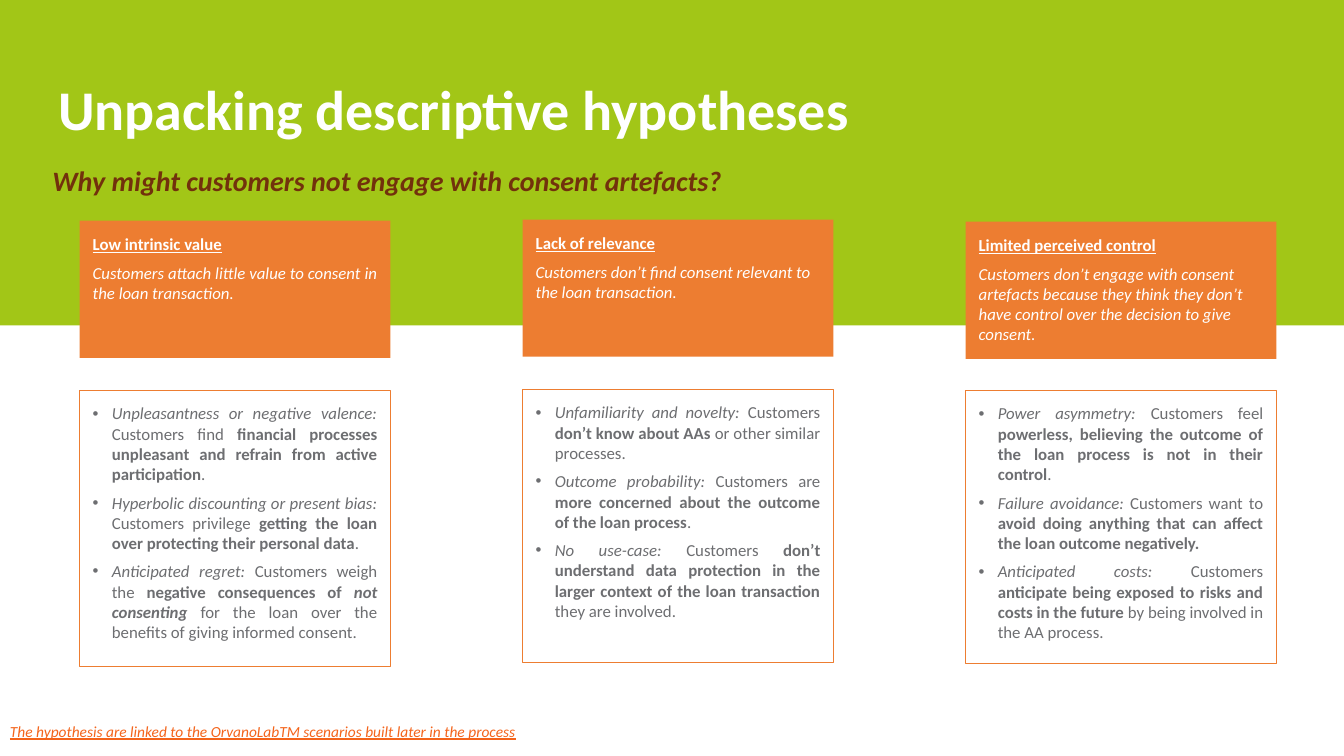
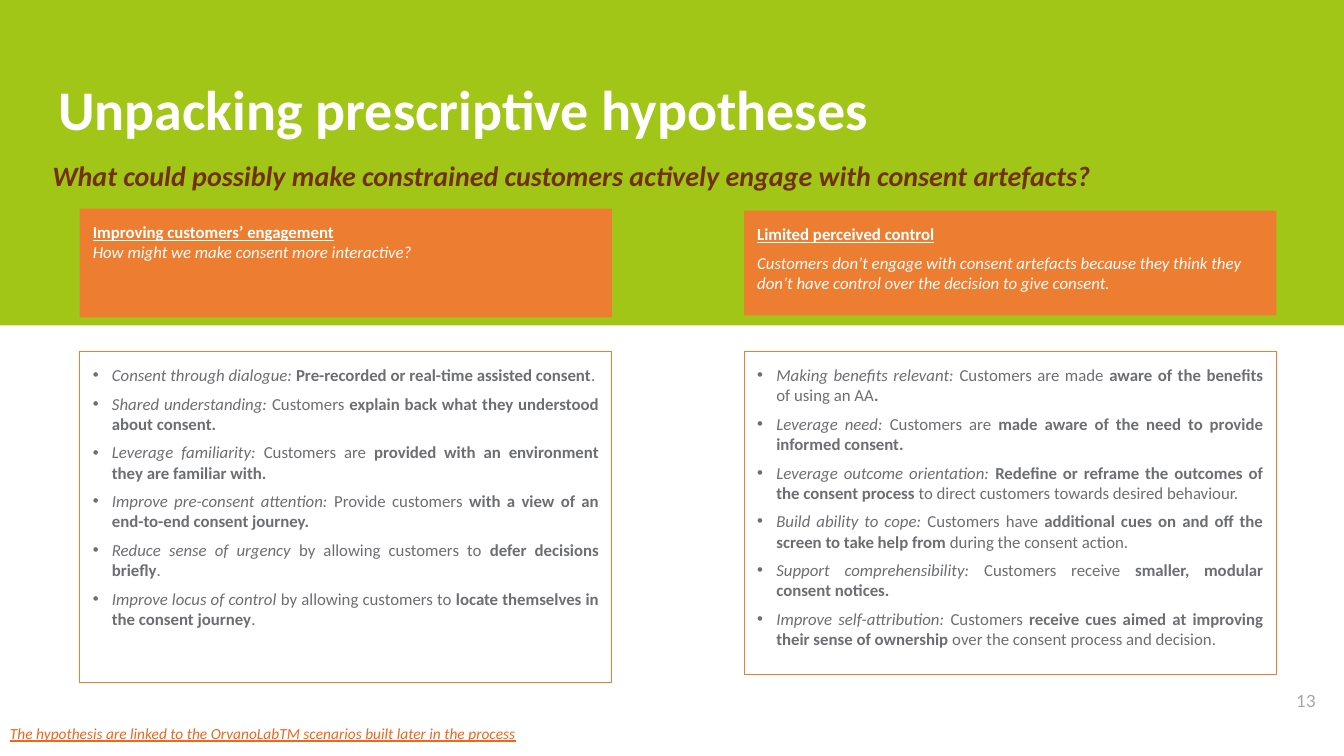
"""Build two slides that unpack hypotheses as columns of cards."""
from dataclasses import dataclass

import lxml.etree
import pptx
import pptx.dml.color
import pptx.enum.shapes
import pptx.enum.text
import pptx.oxml.ns
import pptx.util

Inches = pptx.util.Inches
Pt = pptx.util.Pt
ALIGN = pptx.enum.text.PP_ALIGN
ANCHOR = pptx.enum.text.MSO_ANCHOR

LIME, ORANGE, WHITE = "A2C617", "ED7D31", "FFFFFF"
GREY, BROWN, RUST, PALE = "6D6E71", "72310C", "F4641B", "A5A5A5"
WIDE, TALL = 13.33, 7.5
LEFT, RIGHT, GAP = 0.79, 12.66, 1.31
FOOTER = "The hypothesis are linked to the OrvanoLabTM scenarios built later in the process"


@dataclass(frozen=True)
class Box:
    left: float
    top: float
    width: float
    height: float


@dataclass(frozen=True)
class Style:
    size: float
    color: str
    bold: bool = False
    slant: bool = False
    under: bool = False
    font: str = "Calibri"


@dataclass(frozen=True)
class Card:
    head: str
    note: str
    points: tuple[str, ...]
    top: float
    height: float
    list_top: float
    list_height: float
    align: tuple = (ALIGN.LEFT, ALIGN.LEFT)
    after: float = 6


@dataclass(frozen=True)
class Page:
    title: str
    query: str
    query_box: Box
    cards: tuple[Card, ...]
    foot_top: float
    spacing: float = 1.0
    number: str = ""


TITLE = Style(40, WHITE, bold=True)
QUERY = Style(20, BROWN, bold=True, slant=True)
HEAD = Style(12, WHITE, bold=True, under=True)
NOTE = Style(12, WHITE, slant=True)
BODY = Style(12, GREY)
FOOT = Style(11, RUST, slant=True, under=True)
NUMBER = Style(12, PALE, font="Lato")

CONTROL = "Limited perceived control"
CONTROL_NOTE = (
    "Customers don’t engage with consent artefacts because they think they "
    "don’t have control over the decision to give consent."
)

PAGES = (
    Page(
        "Unpacking descriptive hypotheses",
        "Why might customers not engage with consent artefacts?",
        Box(0.42, 1.52, 12.29, 0.54),
        (
            Card(
                "Low intrinsic value",
                "Customers attach little value to consent in the loan transaction.",
                (
                    "_Unpleasantness or negative valence: _Customers find *financial processes "
                    "unpleasant and refrain from active participation*.",
                    "_Hyperbolic discounting or present bias: _Customers privilege *getting the "
                    "loan over protecting their personal data*.",
                    "_Anticipated regret: _Customers weigh the *negative consequences of _not_ "
                    "_consenting _*for the loan over the benefits of giving informed consent.",
                ),
                2.19, 1.36, 3.87, 2.74, (ALIGN.LEFT, ALIGN.JUSTIFY),
            ),
            Card(
                "Lack of relevance",
                "Customers don’t find consent relevant to the loan transaction.",
                (
                    "_Unfamiliarity and novelty: _Customers* don’t know about AAs *or other "
                    "similar processes.",
                    "_Outcome probability: _Customers are* more concerned about the outcome of "
                    "the loan process*.",
                    "_No use-case: _Customers *don’t understand data protection in the larger "
                    "context of the loan transaction* they are involved.",
                ),
                2.18, 1.36, 3.86, 2.71,
            ),
            Card(
                CONTROL,
                CONTROL_NOTE,
                (
                    "_Power asymmetry: _Customers feel *powerless, believing the outcome of the "
                    "loan process is not in their control*.",
                    "_Failure avoidance: _Customers want to *avoid doing anything that can "
                    "affect the loan outcome negatively.*",
                    "_Anticipated costs: _Customers *anticipate being exposed to risks and costs "
                    "in the future* by being involved in the AA process.",
                ),
                2.2, 1.36, 3.87, 2.71,
            ),
        ),
        7.07,
    ),
    Page(
        "Unpacking prescriptive hypotheses",
        "What could possibly make constrained customers actively engage with consent artefacts?",
        Box(0.42, 1.54, 12.29, 0.47),
        (
            Card(
                "Improving customers’ engagement",
                "How might we make consent more interactive?",
                (
                    "_Consent through dialogue: _*Pre-recorded or real-time assisted consent*.",
                    "_Shared understanding: _Customers *explain back what they understood about "
                    "consent.*",
                    "_Leverage familiarity: _Customers are *provided with an environment they "
                    "are familiar with.*",
                    "_Improve pre-consent attention: _Provide customers *with a view of an "
                    "end-to-end consent journey.*",
                    "_Reduce sense of urgency _by allowing customers to *defer decisions "
                    "briefly*.",
                    "_Improve locus of control _by allowing customers to *locate themselves in "
                    "the consent journey*.",
                ),
                2.07, 1.08, 3.49, 3.28, (ALIGN.JUSTIFY, ALIGN.JUSTIFY), 0,
            ),
            Card(
                CONTROL,
                CONTROL_NOTE,
                (
                    "_Making benefits relevant: _Customers are made *aware of the benefits* of "
                    "using an AA*.*",
                    "_Leverage need: _Customers are *made aware of the need to provide informed "
                    "consent.*",
                    "_Leverage outcome orientation: _*Redefine or reframe the outcomes of the "
                    "consent process* to direct customers towards desired behaviour.",
                    "_Build ability to cope: _Customers have *additional cues on and off the "
                    "screen to take help from* during the consent action.",
                    "_Support comprehensibility: _Customers receive *smaller, modular consent "
                    "notices.*",
                    "_Improve self-attribution: _Customers *receive cues aimed at improving "
                    "their sense of ownership* over the consent process and decision.",
                ),
                2.09, 1.04, 3.49, 3.2,
            ),
        ),
        7.09,
        0.8,
        "13",
    ),
)


def paint(color: str) -> pptx.dml.color.RGBColor:
    return pptx.dml.color.RGBColor.from_string(color)


def place(box: Box) -> tuple:
    return tuple(map(Inches, (box.left, box.top, box.width, box.height)))


def add_rect(slide, box: Box, fill: str = "", line: str = ""):
    rect = slide.shapes.add_shape(pptx.enum.shapes.MSO_SHAPE.RECTANGLE, *place(box))
    rect.shadow.inherit = False
    if fill:
        rect.fill.solid()
        rect.fill.fore_color.rgb = paint(fill)
    else:
        rect.fill.background()
    if line:
        rect.line.color.rgb = paint(line)
        rect.line.width = Pt(0.75)
    else:
        rect.line.fill.background()
    return rect


def set_frame(shape, text: str, inset: float = 0.1, anchor=ANCHOR.TOP):
    frame = shape.text_frame
    frame.word_wrap = True
    frame.vertical_anchor = anchor
    frame.margin_left = frame.margin_right = Inches(inset)
    frame.margin_top = frame.margin_bottom = Inches(inset)
    frame.text = text
    return frame


def style_run(run, style: Style) -> None:
    font = run.font
    font.name, font.size = style.font, Pt(style.size)
    font.bold, font.italic, font.underline = style.bold, style.slant, style.under
    font.color.rgb = paint(style.color)


def style_par(par, style: Style, align=ALIGN.LEFT, after: float = 0) -> None:
    par.alignment = align
    par.space_after = Pt(after)
    for run in par.runs:
        style_run(run, style)


def mark_runs(par) -> None:
    text = par.text
    par.clear()
    for strong, chunk in enumerate(text.split("*")):
        for slant, piece in enumerate(chunk.split("_")):
            if piece:
                run = par.add_run()
                run.text = piece
                style_run(run, Style(BODY.size, BODY.color, strong % 2 == 1, slant % 2 == 1))


def add_bullet(par) -> None:
    qn = pptx.oxml.ns.qn
    props = par._p.get_or_add_pPr()
    props.set("marL", str(Inches(0.19)))
    props.set("indent", str(-Inches(0.19)))
    tint = lxml.etree.SubElement(props, qn("a:buClr"))
    lxml.etree.SubElement(tint, qn("a:srgbClr"), val=GREY)
    lxml.etree.SubElement(props, qn("a:buFont"), typeface="Arial")
    lxml.etree.SubElement(props, qn("a:buChar"), char="•")


def add_label(slide, box: Box, text: str, style: Style, align=ALIGN.LEFT):
    frame = set_frame(slide.shapes.add_textbox(*place(box)), text)
    style_par(frame.paragraphs[0], style, align)
    return frame


def add_card(slide, card: Card, left: float, width: float) -> None:
    top = add_rect(slide, Box(left, card.top, width, card.height), fill=ORANGE)
    frame = set_frame(top, f"{card.head}\n{card.note}", 0.13)
    for par, style, align in zip(frame.paragraphs, (HEAD, NOTE), card.align):
        style_par(par, style, align, card.after)
    base = add_rect(slide, Box(left, card.list_top, width, card.list_height), line=ORANGE)
    for par in set_frame(base, "\n".join(card.points), 0.13).paragraphs:
        mark_runs(par)
        par.alignment = ALIGN.JUSTIFY
        par.space_after = Pt(6)
        add_bullet(par)


def add_page(deck, page: Page) -> None:
    slide = deck.slides.add_slide(deck.slide_layouts[6])
    add_rect(slide, Box(0, 0, WIDE, 3.23), fill=LIME)
    title = add_rect(slide, Box(0.48, 0.63, 12.38, 0.88), fill=LIME)
    style_par(set_frame(title, page.title, anchor=ANCHOR.MIDDLE).paragraphs[0], TITLE)
    query = add_label(slide, page.query_box, page.query, QUERY)
    query.paragraphs[0].line_spacing = page.spacing
    count = len(page.cards)
    width = (RIGHT - LEFT - GAP * (count - 1)) / count
    for index, card in enumerate(page.cards):
        add_card(slide, card, LEFT + index * (width + GAP), width)
    add_label(slide, Box(0, page.foot_top, 5.99, 0.39), FOOTER, FOOT, ALIGN.JUSTIFY)
    if page.number:
        frame = add_label(slide, Box(12.35, 6.8, 0.8, 0.57), page.number, NUMBER, ALIGN.RIGHT)
        frame.margin_top = frame.margin_bottom = Inches(0.05)


def main() -> None:
    deck = pptx.Presentation()
    deck.slide_width, deck.slide_height = Inches(WIDE), Inches(TALL)
    for page in PAGES:
        add_page(deck, page)
    deck.save("out.pptx")


if __name__ == "__main__":
    main()
